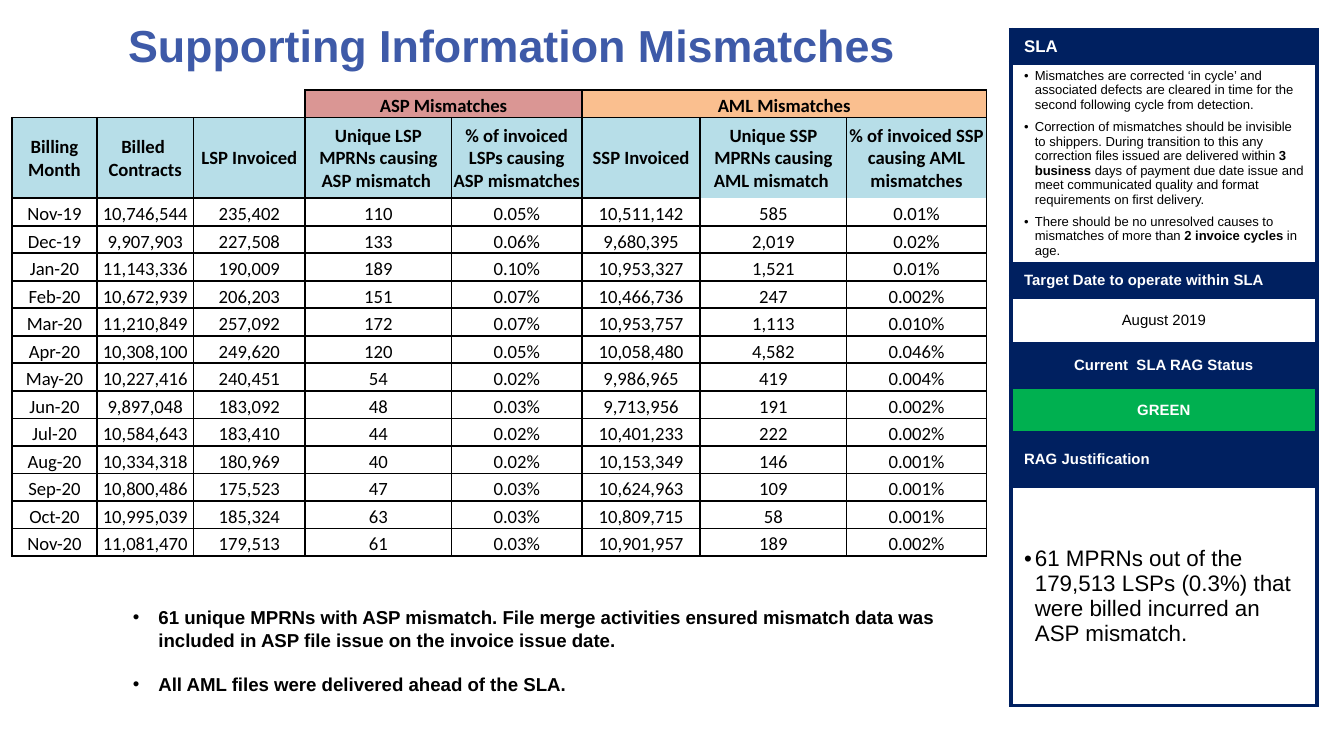
"""Build the supporting information mismatches slide."""
from lxml.etree import SubElement
from pptx import Presentation
from pptx.dml.color import RGBColor
from pptx.enum.text import MSO_ANCHOR, PP_ALIGN
from pptx.oxml.ns import qn
from pptx.util import Inches, Pt

COLORS = {
    "title": "3E5AA8", "navy": "002060", "green": "00B050", "white": "FFFFFF",
    "black": "000000", "rose": "DA9694", "peach": "FABF8F", "sky": "B7DEE8",
}
HEADS = [
    "Billing\nMonth", "Billed \nContracts", "LSP Invoiced",
    "Unique LSP MPRNs causing ASP mismatch ",
    "% of invoiced LSPs causing ASP mismatches", "SSP Invoiced",
    "Unique SSP MPRNs causing AML mismatch ",
    "% of invoiced SSP causing AML mismatches",
]
MONTHS = """Nov-19 10,746,544 235,402 110 0.05% 10,511,142 585 0.01%
Dec-19 9,907,903 227,508 133 0.06% 9,680,395 2,019 0.02%
Jan-20 11,143,336 190,009 189 0.10% 10,953,327 1,521 0.01%
Feb-20 10,672,939 206,203 151 0.07% 10,466,736 247 0.002%
Mar-20 11,210,849 257,092 172 0.07% 10,953,757 1,113 0.010%
Apr-20 10,308,100 249,620 120 0.05% 10,058,480 4,582 0.046%
May-20 10,227,416 240,451 54 0.02% 9,986,965 419 0.004%
Jun-20 9,897,048 183,092 48 0.03% 9,713,956 191 0.002%
Jul-20 10,584,643 183,410 44 0.02% 10,401,233 222 0.002%
Aug-20 10,334,318 180,969 40 0.02% 10,153,349 146 0.001%
Sep-20 10,800,486 175,523 47 0.03% 10,624,963 109 0.001%
Oct-20 10,995,039 185,324 63 0.03% 10,809,715 58 0.001%
Nov-20 11,081,470 179,513 61 0.03% 10,901,957 189 0.002%"""
COLS = [0.63, 0.72, 0.83, 1.09, 0.97, 0.88, 1.09, 1.04]
TERMS = [
    "Mismatches are corrected ‘in cycle’ and associated defects are cleared in "
    "time for the second following cycle from detection.",
    "Correction of mismatches should be invisible to shippers. During transition "
    "to this any correction files issued are delivered within *3 business* days "
    "of payment due date issue and meet communicated quality and format "
    "requirements on first delivery.",
    "There should be no unresolved causes to mismatches of more than "
    "*2 invoice cycles *in age.",
]
REASON = ["61 MPRNs out of the 179,513 LSPs (0.3%) that were billed incurred "
          "an ASP mismatch."]
NOTES = [
    "61 unique MPRNs with ASP mismatch. File merge activities ensured mismatch "
    "data was included in ASP file issue on the invoice issue date.",
    "All AML files were delivered ahead of the SLA.",
]
SIDE = [
    (0.25, ["SLA"], 9, "navy", False, False),
    (1.49, TERMS, 7, None, False, True),
    (0.25, ["Target Date to operate within SLA"], 8, "navy", False, False),
    (0.35, ["August 2019"], 8, None, True, False),
    (0.32, ["Current  SLA RAG Status"], 8, "navy", True, False),
    (0.34, ["GREEN"], 8, "green", True, False),
    (0.4, ["RAG Justification"], 8, "navy", False, False),
    (1.63, REASON, 12, None, False, True),
]


def color(name):
    """Return a named colour."""
    return RGBColor.from_string(COLORS[name])


def style(para, size, ink="black", bold=False, font="Arial"):
    """Format every run of a paragraph."""
    for run in para.runs:
        run.font.size = Pt(size)
        run.font.name = font
        run.font.bold = bold
        run.font.color.rgb = color(ink)


def bullet(para, dent):
    """Give a paragraph a hanging bullet."""
    props = para._p.get_or_add_pPr()
    props.set("marL", str(Inches(dent)))
    props.set("indent", str(-Inches(dent)))
    SubElement(props, qn("a:buFont")).set("typeface", "Arial")
    SubElement(props, qn("a:buChar")).set("char", "•")


def fill_list(frame, items, size, dent, gap):
    """Write bulleted items, with starred parts in bold."""
    for i, item in enumerate(items):
        para = frame.paragraphs[0] if i == 0 else frame.add_paragraph()
        if i:
            para.space_before = Pt(gap)
        bullet(para, dent)
        for part in item.split("*"):
            para.add_run().text = part
        style(para, size)
        for run in para.runs[1::2]:
            run.font.bold = True


def edge(cell, sides, name, width):
    """Draw the listed sides of a cell and clear the others."""
    props = cell._tc.get_or_add_tcPr()
    for side in "LRTB":
        line = SubElement(props, qn("a:ln" + side), w=str(Pt(width)))
        if side in sides:
            paint = SubElement(line, qn("a:solidFill"))
            SubElement(paint, qn("a:srgbClr"), val=COLORS[name])
        else:
            SubElement(line, qn("a:noFill"))


def shade(cell, name):
    """Fill a cell, or leave it clear."""
    if name:
        cell.fill.solid()
        cell.fill.fore_color.rgb = color(name)
    else:
        cell.fill.background()


def inset(cell, side, top, base):
    """Set the margins of a cell."""
    cell.margin_left = cell.margin_right = Inches(side)
    cell.margin_top, cell.margin_bottom = Inches(top), Inches(base)


def add_grid(slide, left, top, cols, rows):
    """Add a plain table of given column widths and row heights."""
    grid = slide.shapes.add_table(
        len(rows), len(cols), Inches(left), Inches(top),
        Inches(sum(cols)), Inches(sum(rows))).table
    grid.first_row = grid.horz_banding = False
    for col, width in zip(grid.columns, cols):
        col.width = Inches(width)
    for row, height in zip(grid.rows, rows):
        row.height = Inches(height)
    return grid


def add_title(slide):
    """Place the title."""
    title = slide.shapes.title
    title.left, title.top = Inches(0.21), Inches(-0.02)
    title.width, title.height = Inches(7.19), Inches(0.7)
    frame = title.text_frame
    frame.text = "Supporting Information Mismatches"
    frame.vertical_anchor = MSO_ANCHOR.MIDDLE
    frame.paragraphs[0].alignment = PP_ALIGN.CENTER
    style(frame.paragraphs[0], 24, "title", True)


def add_side(slide):
    """Add the SLA panel."""
    grid = add_grid(slide, 7.52, 0.22, [2.28], [row[0] for row in SIDE])
    for i, (_, items, size, back, mid, dots) in enumerate(SIDE):
        cell = grid.cell(i, 0)
        inset(cell, 0.1, 0.02, 0.02)
        cell.vertical_anchor = MSO_ANCHOR.MIDDLE
        edge(cell, "LRTB", "navy", 2.25)
        shade(cell, back)
        if dots:
            fill_list(cell.text_frame, items, size, 0.08, 4)
            continue
        para = cell.text_frame.paragraphs[0]
        para.text = items[0]
        para.alignment = PP_ALIGN.CENTER if mid else PP_ALIGN.LEFT
        style(para, size, "white" if back else "black", bool(back))


def add_notes(slide):
    """Add the bullets under the table."""
    box = slide.shapes.add_textbox(
        Inches(0.89), Inches(4.46), Inches(6.45), Inches(0.87))
    box.text_frame.word_wrap = True
    fill_list(box.text_frame, NOTES, 10, 0.19, 12)
    for para in box.text_frame.paragraphs:
        style(para, 10, bold=True)


def sides_at(row, col):
    """Tell which sides of a month table cell are drawn."""
    if row == 0 and col < 3:
        return "RB" if col == 2 else "B"
    if col > 5 and row in (1, 2):
        return "LTR" if row == 1 else "LRB"
    return "LRTB"


def add_months(slide):
    """Add the table of mismatches by month."""
    bands = ["", "", "", "ASP Mismatches", "", "AML Mismatches", "", ""]
    data = [bands, HEADS] + [line.split() for line in MONTHS.splitlines()]
    low = (3.47 - 0.6) / (len(data) - 1)
    rows = [0.6 if i == 1 else low for i in range(len(data))]
    grid = add_grid(slide, 0.09, 0.67, COLS, rows)
    tops = [None] * 3 + ["rose"] * 2 + ["peach"] * 3
    for i, row in enumerate(data):
        for j, text in enumerate(row):
            cell = grid.cell(i, j)
            inset(cell, 0.01, 0.01, 0)
            cell.vertical_anchor = MSO_ANCHOR.MIDDLE if i == 1 else MSO_ANCHOR.BOTTOM
            edge(cell, sides_at(i, j), "black", 1)
            shade(cell, tops[j] if i == 0 else "sky" if i == 1 else None)
            para = cell.text_frame.paragraphs[0]
            para.text = text
            para.alignment = PP_ALIGN.CENTER
            style(para, 10, bold=i < 2, font="Calibri")
            para._p.get_or_add_endParaRPr().set("sz", "1000")
    grid.cell(0, 3).merge(grid.cell(0, 4))
    grid.cell(0, 5).merge(grid.cell(0, 7))


def main():
    """Build and save the slide."""
    deck = Presentation()
    deck.slide_width = Inches(10)
    deck.slide_height = deck.slide_width * 9 // 16
    slide = deck.slides.add_slide(deck.slide_layouts[5])
    add_title(slide)
    add_side(slide)
    add_notes(slide)
    add_months(slide)
    deck.save("out.pptx")


if __name__ == "__main__":
    main()
